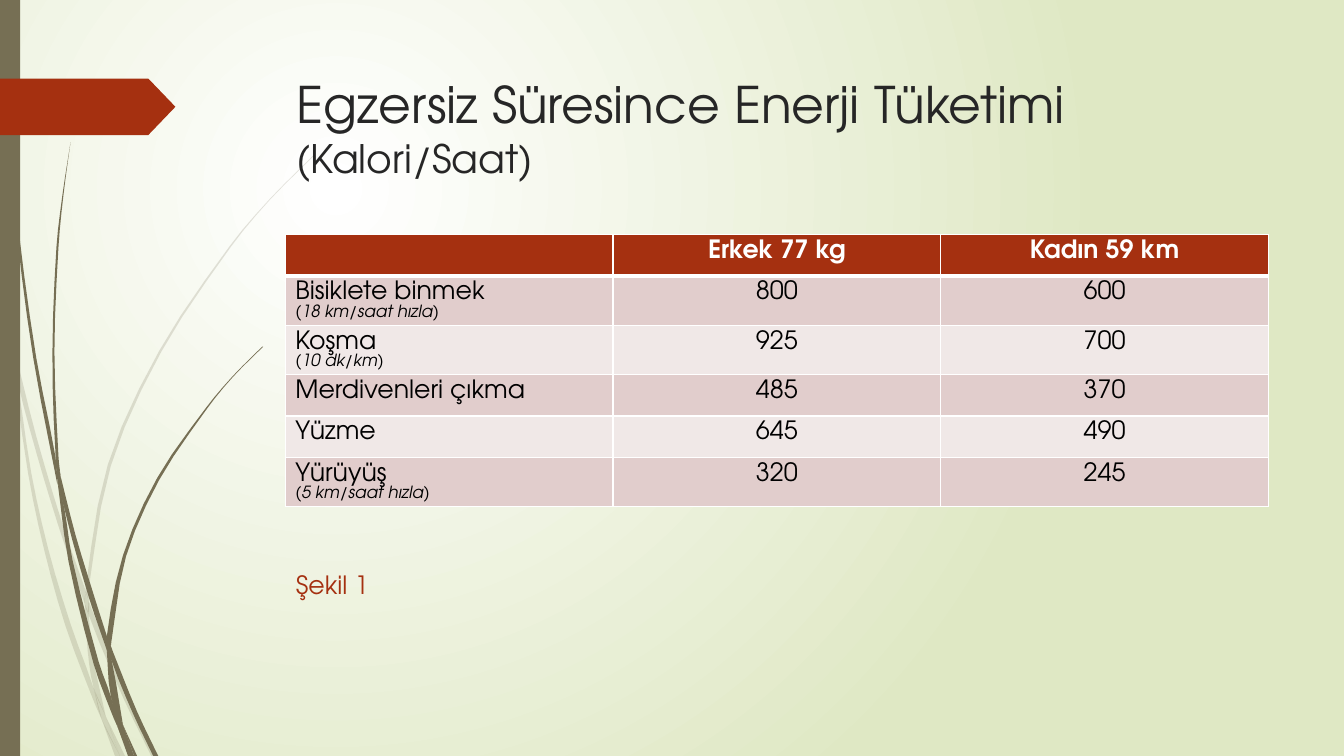
from dataclasses import dataclass

from lxml.etree import SubElement
from pptx import Presentation
from pptx.dml.color import RGBColor
from pptx.enum.shapes import MSO_SHAPE as Shape
from pptx.enum.text import MSO_ANCHOR as Anchor, PP_ALIGN as Align
from pptx.oxml.ns import qn
from pptx.util import Inches, Pt

FONT = "TeX Gyre Adventor"
OLIVE, RUST, WHITE, BLACK = "766F54", "A53010", "FFFFFF", "000000"
BANDS = ("E1CDCC", "F0E8E7")
STEPS = 3  # samples between two points of an edge
Edge = list[tuple[float, float]]


@dataclass
class Wisp:
    """Piece of grass between two edges, each from top to bottom in inches."""
    left: Edge
    right: Edge


@dataclass
class Activity:
    name: str
    pace: str
    man: int
    woman: int


FAINT_WISPS = [
    Wisp([(0, 2.99), (.1, 3.44), (.11, 3.5)], [(0, 2.82), (.09, 3.22), (.11, 3.5)]),
    Wisp([(.14, 3.45), (.17, 3.76), (.36, 4.49), (.58, 5.22), (.84, 5.99)],
         [(.14, 3.45), (.36, 4.33), (.62, 5.2), (.85, 5.86)]),
    Wisp([(.88, 5.96), (.88, 6.1), (1.23, 6.94), (1.5, 7.5)], [(.88, 5.96), (.92, 6.07), (1.27, 6.92), (1.55, 7.5)]),
    Wisp([(1.05, 7.11), (1.19, 7.5)], [(1.05, 7.11), (1.24, 7.5)]),
    Wisp([(.11, 3.5), (.28, 4.7), (.44, 5.46), (.65, 6.21), (.92, 6.93), (1.01, 7.14)],
         [(.11, 3.5), (.17, 3.76), (.31, 4.69), (.48, 5.45), (.7, 6.19), (.93, 6.83), (1.01, 7.14)]),
    Wisp([(.84, 5.99), (.87, 6.46), (.93, 6.83), (1.05, 7.11)], [(.84, 5.99), (.88, 6.1), (.91, 6.46), (1.05, 7.11)]),
    Wisp([(3.12, 1.53), (2.68, 1.97), (2.28, 2.44), (1.58, 3.48), (1.07, 4.61), (.85, 5.84), (.88, 5.96)],
         [(3.12, 1.54), (2.68, 1.98), (2.29, 2.45), (1.6, 3.49), (1.1, 4.62), (.88, 5.84), (.88, 5.96)]),
    Wisp([(1.01, 7.14), (1.14, 7.5)], [(1.01, 7.14), (1.19, 7.5)]),
    Wisp([(.85, 5.86), (.84, 5.99), (.88, 6.1)], [(.85, 5.86), (.88, 5.96), (.88, 6.1)]),
    Wisp([(.93, 6.83), (1.01, 7.14), (1.19, 7.5)], [(.93, 6.83), (1.05, 7.11), (1.19, 7.5)]),
]
DARK_WISPS = [
    Wisp([(.03, 0), (.04, .48), (.07, 1.1), (.17, 2.33), (.33, 3.55), (.57, 4.81)],
         [(.04, 0), (.05, .48), (.08, 1.09), (.19, 2.32), (.36, 3.55), (.55, 4.53), (.57, 4.81)]),
    Wisp([(.6, 4.72), (.64, 5.05), (.88, 5.92), (1.06, 6.45)], [(.6, 4.72), (.75, 5.31), (.93, 5.9), (1.06, 6.31)]),
    Wisp([(1.1, 6.41), (1.11, 6.56), (1.32, 7.08), (1.52, 7.5)], [(1.1, 6.41), (1.13, 6.49), (1.36, 7.06), (1.57, 7.5)]),
    Wisp([(.57, 4.77), (.68, 5.57), (.93, 6.59), (1.11, 7.08), (1.17, 7.22)],
         [(.57, 4.77), (.64, 5.05), (.72, 5.56), (.98, 6.57), (1.1, 6.91), (1.17, 7.22)]),
    Wisp([(.7, 1.41), (.62, 1.93), (.56, 2.45), (.52, 3.49), (.55, 4.49), (.6, 4.72)],
         [(.7, 1.41), (.63, 1.93), (.58, 2.45), (.54, 3.49), (.58, 4.53), (.6, 4.72)]),
    Wisp([(1.22, 7.19), (1.33, 7.5)], [(1.22, 7.19), (1.36, 7.5)]),
    Wisp([(.55, 4.49), (.57, 4.77), (.64, 5.05)], [(.55, 4.49), (.6, 4.72), (.64, 5.05)]),
    Wisp([(2.6, 3.44), (2.31, 3.73), (2.04, 4.05), (1.56, 4.74), (1.22, 5.51), (1.06, 6.31), (1.1, 6.41)],
         [(2.61, 3.44), (2.31, 3.74), (2.05, 4.06), (1.58, 4.76), (1.25, 5.52), (1.11, 6.33), (1.1, 6.41)]),
    Wisp([(1.17, 7.22), (1.27, 7.5)], [(1.17, 7.22), (1.31, 7.5)]),
    Wisp([(1.06, 6.45), (1.1, 6.91), (1.22, 7.19)], [(1.06, 6.45), (1.11, 6.56), (1.22, 7.19)]),
    Wisp([(1.06, 6.31), (1.06, 6.45), (1.11, 6.56)], [(1.06, 6.31), (1.1, 6.41), (1.11, 6.56)]),
    Wisp([(1.1, 6.91), (1.17, 7.22), (1.3, 7.5)], [(1.1, 6.91), (1.22, 7.19), (1.33, 7.5)]),
]

HEADINGS = ("", "Erkek 77 kg", "Kadın 59 km")
ACTIVITIES = [
    Activity("Bisiklete binmek", "(18 km/saat hızla)", 800, 600),
    Activity("Koşma", "(10 dk/km)", 925, 700),
    Activity("Merdivenleri çıkma", "", 485, 370),
    Activity("Yüzme", "", 645, 490),
    Activity("Yürüyüş", "(5 km/saat hızla)", 320, 245),
]


def paint(fill, color: str) -> None:
    fill.solid()
    fill.fore_color.rgb = RGBColor.from_string(color)


def style(font, size: float, color: str, bold: bool = False, italic: bool = False) -> None:
    font.name, font.size, font.bold, font.italic = FONT, Pt(size), bold, italic
    font.color.rgb = RGBColor.from_string(color)


def finish(shape, color: str, opacity: int = 100) -> None:
    shape.shadow.inherit = False
    paint(shape.fill, color)
    shape.line.fill.background()
    if opacity < 100:
        tint = shape.element.spPr.find(".//" + qn("a:srgbClr"))
        SubElement(tint, qn("a:alpha"), val=str(opacity * 1000))


def smooth(edge: Edge) -> Edge:
    """Cubic curve through the points, x as a function of y."""
    padded = [edge[0], *edge, edge[-1]]
    slopes = [(c[0] - a[0]) / (c[1] - a[1]) for a, c in zip(padded, padded[2:])]
    curve = []
    for (x0, y0), (x1, y1), m0, m1 in zip(edge, edge[1:], slopes, slopes[1:]):
        for t in (step / STEPS for step in range(STEPS)):
            bend = (y1 - y0) * t * (1 - t) * (m0 * (1 - t) - m1 * t)
            curve.append((x0 + (x1 - x0) * t * t * (3 - 2 * t) + bend, y0 + (y1 - y0) * t))
    return curve + [edge[-1]]


def draw_wisp(shapes, wisp: Wisp, opacity: int) -> None:
    outline = [(Inches(x), Inches(y)) for x, y in smooth(wisp.left) + smooth(wisp.right)[::-1]]
    builder = shapes.build_freeform(*outline[0])
    builder.add_line_segments(outline[1:], close=True)
    finish(builder.convert_to_shape(), OLIVE, opacity)


def fill_cell(cell, lines: list[str], fill: str, color: str, align: Align,
              bottom: float = 1, bold: bool = False) -> None:
    for side, width in (("L", 1), ("R", 1), ("T", 1), ("B", bottom)):
        border = SubElement(cell._tc.get_or_add_tcPr(), qn(f"a:ln{side}"), w=str(Pt(width)))
        SubElement(SubElement(border, qn("a:solidFill")), qn("a:srgbClr"), val=WHITE)
    paint(cell.fill, fill)
    cell.text_frame.text = "\n".join(lines)
    for index, paragraph in enumerate(cell.text_frame.paragraphs):
        paragraph.alignment = align
        for run in paragraph.runs:
            style(run.font, 12 if index else 18, color, bold, italic=index > 0)


def draw_background(slide) -> None:
    fill = slide.background.fill
    fill.gradient()
    for stop, color, position in zip(fill.gradient_stops, (WHITE, "DFE8C4"), (0, 1)):
        stop.color.rgb = RGBColor.from_string(color)
        stop.position = position
    gradient = slide.element.find(".//" + qn("a:gradFill"))
    gradient.remove(gradient.find(qn("a:lin")))
    circle = SubElement(gradient, qn("a:path"), path="circle")
    SubElement(circle, qn("a:fillToRect"), l="50000", t="50000", r="100000", b="100000")


def draw_title(slide) -> None:
    title = slide.shapes.title
    title.element.getparent().append(title.element)  # in front of the wisps
    title.left, title.top, title.width, title.height = map(Inches, (2.84, .68, 9.75, 1.4))
    title.text_frame.word_wrap, title.text_frame.vertical_anchor = True, Anchor.TOP
    heading = title.text_frame.paragraphs[0]
    heading.alignment = Align.LEFT
    for words, size in (("Egzersiz Süresince Enerji Tüketimi ", 36), ("(Kalori/Saat)", 28)):
        run = heading.add_run()
        run.text = words
        style(run.font, size, "262626")


def draw_energy_table(slide) -> None:
    rows = len(ACTIVITIES) + 1
    energy = slide.shapes.add_table(rows, len(HEADINGS), Inches(2.83), Inches(2.33),
                                    Inches(9.75), Inches(.41 * rows)).table
    for column, heading in enumerate(HEADINGS):
        fill_cell(energy.cell(0, column), [heading], RUST, WHITE, Align.CENTER, 3, True)
    for row, activity in enumerate(ACTIVITIES, 1):
        band = BANDS[(row - 1) % 2]
        label = [activity.name] + ([activity.pace] if activity.pace else [])
        fill_cell(energy.cell(row, 0), label, band, BLACK, Align.LEFT)
        for column, calories in enumerate((activity.man, activity.woman), 1):
            fill_cell(energy.cell(row, column), [str(calories)], band, BLACK, Align.CENTER)


deck = Presentation()
deck.slide_width, deck.slide_height = Inches(13.33), Inches(7.5)
slide = deck.slides.add_slide(deck.slide_layouts[5])
draw_background(slide)

# Side decoration
for wisps, opacity in ((FAINT_WISPS, 20), (DARK_WISPS, 100)):
    for wisp in wisps:
        draw_wisp(slide.shapes, wisp, opacity)
finish(slide.shapes.add_shape(Shape.RECTANGLE, 0, 0, Inches(.2), Inches(7.5)), OLIVE)
page_tag = slide.shapes.add_shape(Shape.PENTAGON, 0, Inches(.78), Inches(1.74), Inches(.56))
page_tag.adjustments[0] = .48
finish(page_tag, RUST)

# Title, table and caption
draw_title(slide)
draw_energy_table(slide)
caption = slide.shapes.add_textbox(Inches(2.83), Inches(5.6), Inches(.93), Inches(.4))
caption.text_frame.word_wrap = False
caption.text_frame.text = "Şekil 1"
caption.text_frame.paragraphs[0].alignment = Align.CENTER
style(caption.text_frame.paragraphs[0].runs[0].font, 18, RUST)
deck.save("out.pptx")
